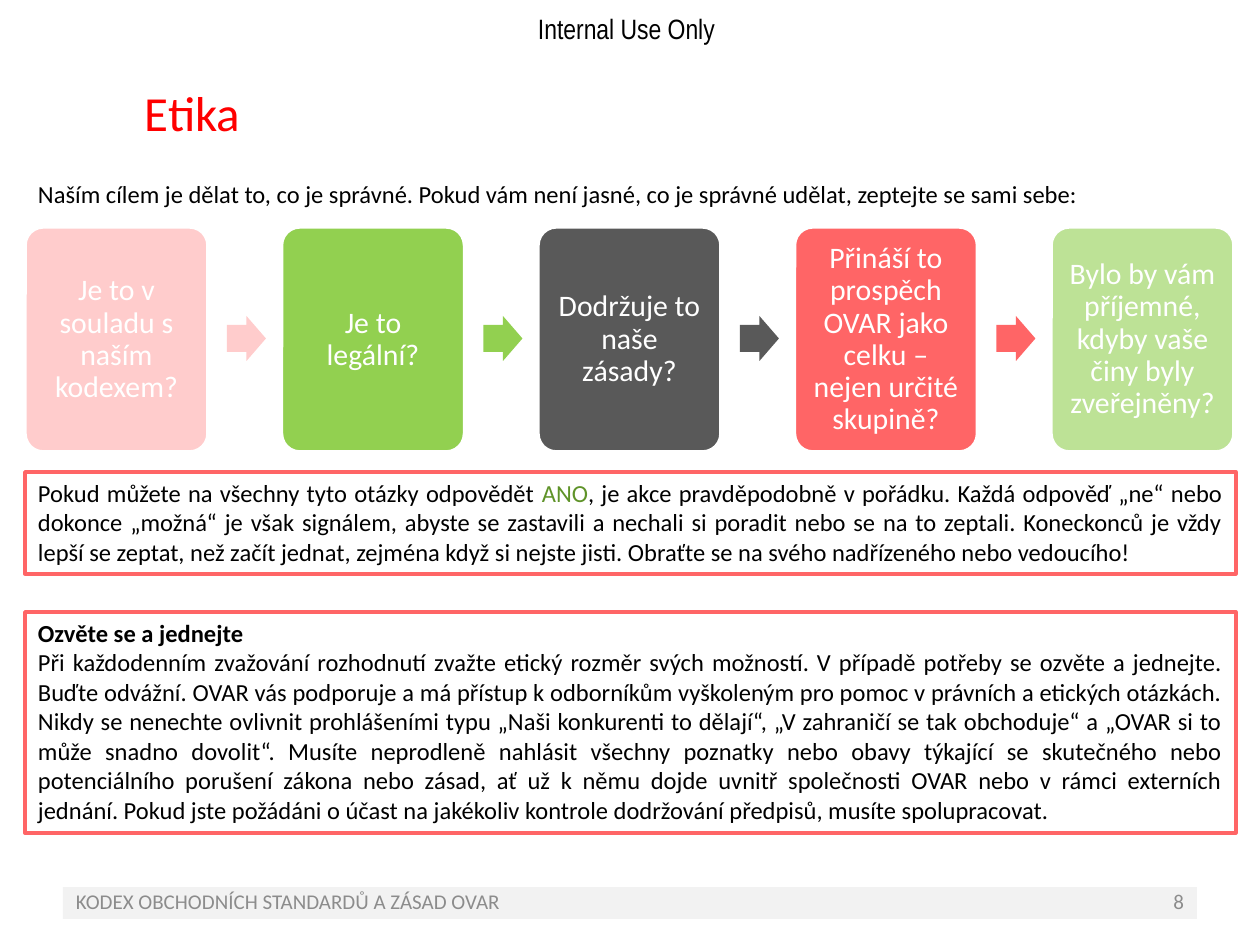
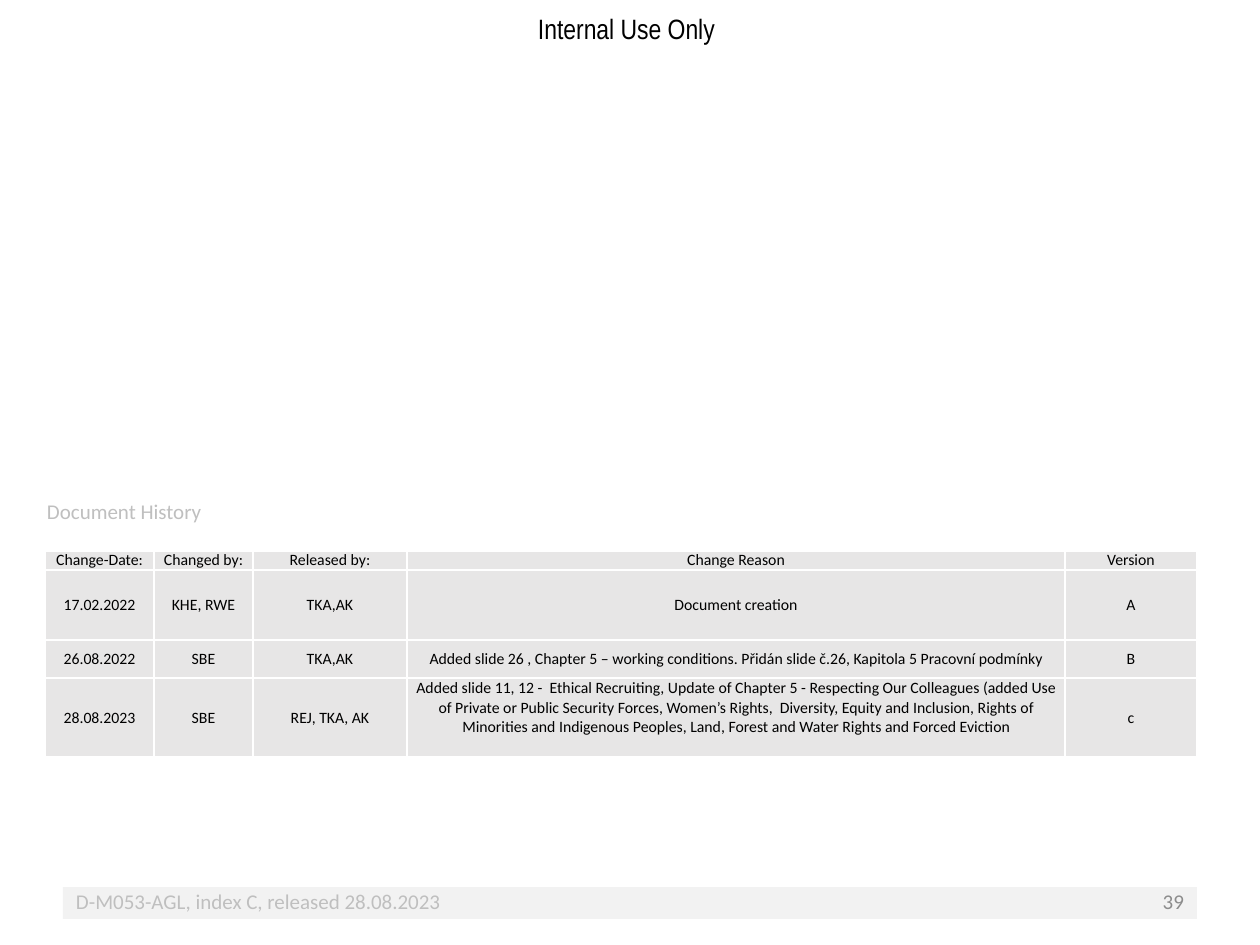
from lxml import etree
from pptx import Presentation
from pptx import util as u
from pptx.dml.color import RGBColor
from pptx.enum import shapes, text
from pptx.oxml import ns

# Shared look
FONT, LABEL_FONT = "Calibri", "Arial Narrow"
BLACK, WHITE, RED, CORAL, GREEN = "000000", "FFFFFF", "FF0000", "FF6566", "5F9329"
BAND, GREY, PALE_GREY, CELL = "F2F2F2", "8C8C8C", "BFBFBF", "E7E6E6"
LEFT, CENTER = text.PP_ALIGN.LEFT, text.PP_ALIGN.CENTER
RIGHT, JUSTIFY = text.PP_ALIGN.RIGHT, text.PP_ALIGN.JUSTIFY
TOP, MIDDLE = text.MSO_ANCHOR.TOP, text.MSO_ANCHOR.MIDDLE
SHAPE = shapes.MSO_SHAPE
PX = 914400 / 126
INSETS = (13, 6, 13, 6)

# Content: ethics slide
LABEL = "Internal Use Only"
ETHICS_TITLE = "Etika"
ETHICS_FOOTER = ("KODEX OBCHODNÍCH STANDARDŮ A ZÁSAD OVAR", GREY, "8")
INTRO = ("Naším cílem je dělat to, co je správné. Pokud vám není jasné, "
         "co je správné udělat, zeptejte se sami sebe:")
QUESTIONS = [
    ("Je to v souladu s naším kodexem?", "FFCCCC"),
    ("Je to legální?", "92D050"),
    ("Dodržuje to naše zásady?", "595959"),
    ("Přináší to prospěch OVAR jako celku – nejen určité skupině?", CORAL),
    ("Bylo by vám příjemné, kdyby vaše činy byly zveřejněny?", "BDE296"),
]
# Each paragraph: alignment, then runs of (words, colour, bold)
ANSWER = [(JUSTIFY, [
    ("Pokud můžete na všechny tyto otázky odpovědět ", BLACK, False),
    ("ANO", GREEN, False),
    (", je akce pravděpodobně v pořádku. Každá odpověď „ne“ nebo dokonce „možná“ je však "
     "signálem, abyste se zastavili a nechali si poradit nebo se na to zeptali. Koneckonců "
     "je vždy lepší se zeptat, než začít jednat, zejména když si nejste jisti. Obraťte se "
     "na svého nadřízeného nebo vedoucího!", BLACK, False),
])]
SPEAK_UP = [
    (LEFT, [("Ozvěte se a jednejte", BLACK, True)]),
    (JUSTIFY, [(
        "Při každodenním zvažování rozhodnutí zvažte etický rozměr svých možností. V případě "
        "potřeby se ozvěte a jednejte. Buďte odvážní. OVAR vás podporuje a má přístup k "
        "odborníkům vyškoleným pro pomoc v právních a etických otázkách. Nikdy se nenechte "
        "ovlivnit prohlášeními typu „Naši konkurenti to dělají“, „V zahraničí se tak "
        "obchoduje“ a „OVAR si to může snadno dovolit“. Musíte neprodleně nahlásit všechny "
        "poznatky nebo obavy týkající se skutečného nebo potenciálního porušení zákona nebo "
        "zásad, ať už k němu dojde uvnitř společnosti OVAR nebo v rámci externích jednání. "
        "Pokud jste požádáni o účast na jakékoliv kontrole dodržování předpisů, musíte "
        "spolupracovat.", BLACK, False)]),
]

# Content: document history slide
HISTORY_FOOTER = ("D-M053-AGL, index C, released 28.08.2023", PALE_GREY, "39")
HISTORY_HEADING = "Document History"
HISTORY = [
    ("Change-Date:", "Changed by:", "Released by:", "Change Reason", "Version"),
    ("17.02.2022", "KHE, RWE", "TKA,AK", "Document creation", "A"),
    ("26.08.2022", "SBE", "TKA,AK",
     "Added slide 26 , Chapter 5 – working conditions. "
     "Přidán slide č.26, Kapitola 5 Pracovní podmínky", "B"),
    ("28.08.2023", "SBE", "REJ, TKA, AK",
     "Added slide 11, 12 -  Ethical Recruiting, Update of Chapter 5 - Respecting Our "
     "Colleagues (added Use of Private or Public Security Forces, Women’s Rights,  "
     "Diversity, Equity and Inclusion, Rights of Minorities and Indigenous Peoples, Land, "
     "Forest and Water Rights and Forced Eviction", "c"),
]
COLUMN_WIDTHS = [109, 99, 154, 658, 132]
ROW_HEIGHTS = [19, 70, 38, 79]
LONG_REASON = (3, 3)


# Helpers
def px(value):
    return u.Emu(round(value * PX))


def color(value):
    return RGBColor.from_string(value)


def line(words, ink=BLACK, align=LEFT):
    return [(align, [(words, ink, False)])]


def write(frame, paragraphs, size, font=FONT, spacing=None, after=None):
    for index, (align, runs) in enumerate(paragraphs):
        paragraph = frame.paragraphs[0] if index == 0 else frame.add_paragraph()
        paragraph.alignment = align
        if spacing:
            paragraph.line_spacing = spacing
        if after:
            paragraph.space_after = u.Pt(after)
        for words, ink, bold in runs:
            run = paragraph.add_run()
            run.text = words
            run.font.name, run.font.size, run.font.bold = font, u.Pt(size), bold
            run.font.color.rgb = color(ink)


def set_margins(target, insets):
    (target.margin_left, target.margin_top,
     target.margin_right, target.margin_bottom) = map(px, insets)


def fill_frame(shape, paragraphs, size, anchor=TOP, insets=INSETS, **style):
    frame = shape.text_frame
    frame.word_wrap = True
    frame.auto_size = text.MSO_AUTO_SIZE.NONE
    frame.vertical_anchor = anchor
    set_margins(frame, insets)
    write(frame, paragraphs, size, **style)


def add_text(slide, box, paragraphs, size, **style):
    fill_frame(slide.shapes.add_textbox(*map(px, box)), paragraphs, size, **style)


def add_shape(slide, kind, box, fill, outline=None):
    shape = slide.shapes.add_shape(kind, *map(px, box))
    shape.shadow.inherit = False
    shape.fill.solid()
    shape.fill.fore_color.rgb = color(fill)
    if outline:
        shape.line.color.rgb = color(outline)
        shape.line.width = u.Pt(2)
    else:
        shape.line.fill.background()
    return shape


def add_frame_parts(slide, footer):
    words, ink, number = footer
    add_shape(slide, SHAPE.RECTANGLE, (63, 887, 1134, 32), BAND)
    add_text(slide, (525, 6, 218, 47), line(LABEL), 16, font=LABEL_FONT)
    add_text(slide, (63, 876, 766, 50), line(words, ink), 12, anchor=MIDDLE)
    add_text(slide, (903, 876, 294, 50), line(number, GREY, RIGHT), 12, anchor=MIDDLE)


def add_cell_borders(cell):
    properties = cell._tc.get_or_add_tcPr()
    for side in ("a:lnL", "a:lnR", "a:lnT", "a:lnB"):
        border = etree.SubElement(properties, ns.qn(side), w=str(u.Pt(1)))
        solid = etree.SubElement(border, ns.qn("a:solidFill"))
        etree.SubElement(solid, ns.qn("a:srgbClr"), val=WHITE)


# Slides
def build_ethics(presentation):
    slide = presentation.slides.add_slide(presentation.slide_layouts[5])
    title = slide.shapes.title
    title.left, title.top, title.width, title.height = map(px, (132, 62, 917, 100))
    fill_frame(title, line(ETHICS_TITLE, RED), 28, anchor=MIDDLE)
    add_frame_parts(slide, ETHICS_FOOTER)
    add_text(slide, (25, 173, 1102, 43), line(INTRO), 14)

    # Question cards with arrows between them
    first, last_edge, width = 25, 1234, 183
    pitch = (last_edge - first - width) / (len(QUESTIONS) - 1)
    for index, (question, fill) in enumerate(QUESTIONS):
        left = first + index * pitch
        card = add_shape(slide, SHAPE.ROUNDED_RECTANGLE, (left, 227, width, 225), fill, WHITE)
        card.adjustments[0] = 0.1
        fill_frame(card, line(question, WHITE, CENTER), 17, anchor=MIDDLE,
                   insets=(9, 9, 9, 9), spacing=0.9)
        if index < len(QUESTIONS) - 1:
            arrow = add_shape(slide, SHAPE.RIGHT_ARROW, (left + 202, 316, 39, 45), fill)
            arrow.adjustments[0] = 0.6

    # Framed advice
    for top, height, paragraphs in ((472, 102, ANSWER), (612, 221, SPEAK_UP)):
        panel = add_shape(slide, SHAPE.RECTANGLE, (25, top, 1211, height), WHITE, CORAL)
        fill_frame(panel, paragraphs, 14)


def build_history(presentation):
    slide = presentation.slides.add_slide(presentation.slide_layouts[6])
    add_frame_parts(slide, HISTORY_FOOTER)
    add_text(slide, (34, 493, 587, 38), line(HISTORY_HEADING, PALE_GREY), 12)

    box = (45, 551, sum(COLUMN_WIDTHS), sum(ROW_HEIGHTS))
    table = slide.shapes.add_table(len(HISTORY), len(COLUMN_WIDTHS), *map(px, box)).table
    table.first_row = table.horz_banding = False
    for column, width in zip(table.columns, COLUMN_WIDTHS):
        column.width = px(width)
    for row_index, (row, height) in enumerate(zip(HISTORY, ROW_HEIGHTS)):
        table.rows[row_index].height = px(height)
        for column_index, words in enumerate(row):
            cell = table.cell(row_index, column_index)
            bottom = 20 if (row_index, column_index) == LONG_REASON else 0
            set_margins(cell, (9, 0, 9, bottom))
            cell.vertical_anchor = MIDDLE
            add_cell_borders(cell)
            cell.fill.solid()
            cell.fill.fore_color.rgb = color(CELL)
            write(cell.text_frame, line(words, align=CENTER), 9, after=2)


def main():
    presentation = Presentation()
    presentation.slide_width, presentation.slide_height = px(1260), px(945)
    build_ethics(presentation)
    build_history(presentation)
    presentation.save("out.pptx")


if __name__ == "__main__":
    main()
